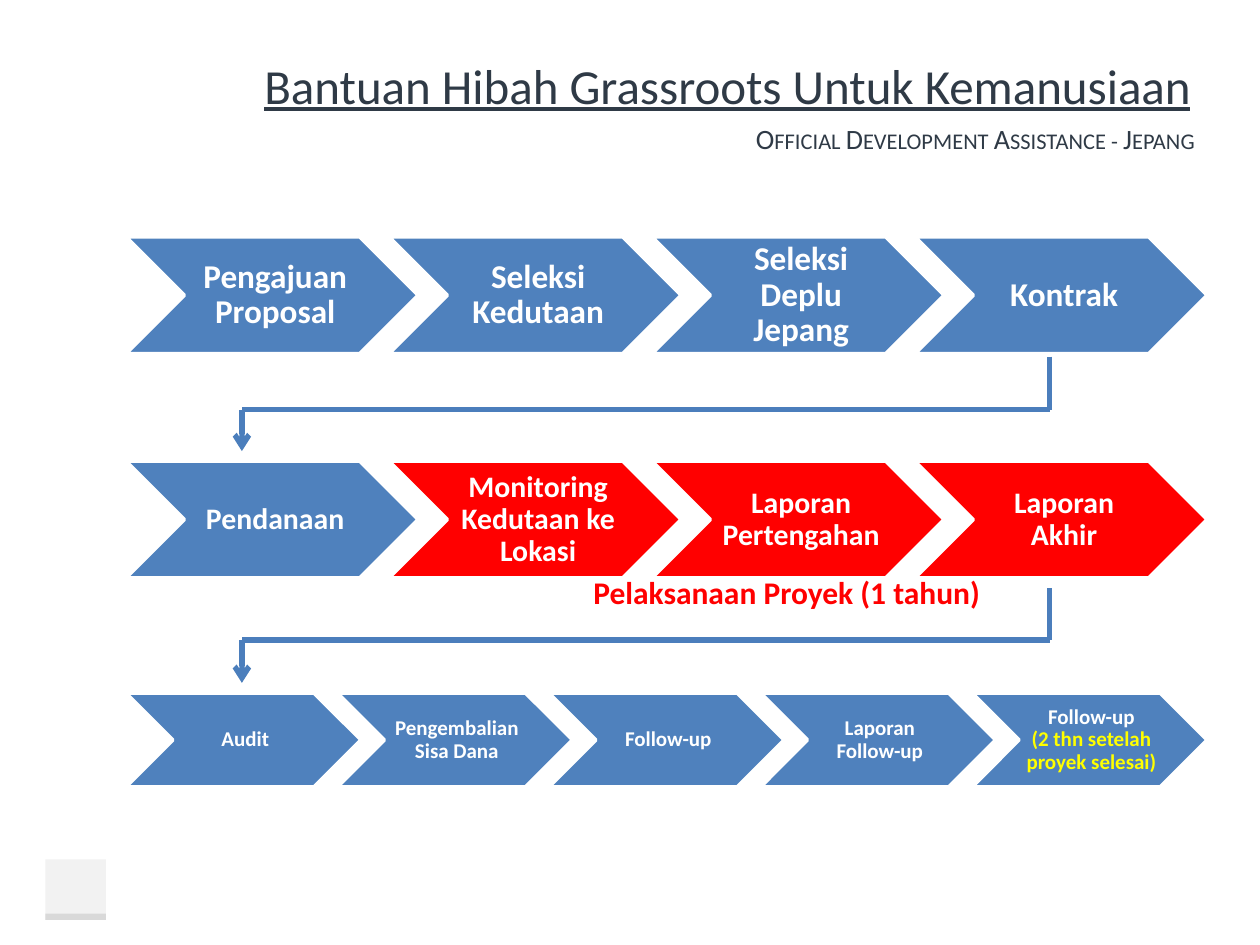
import pptx
import pptx.util
import pptx.dml.color
import pptx.enum.shapes
import pptx.enum.text
import pptx.oxml.ns
from lxml import etree

Inches, Pt = pptx.util.Inches, pptx.util.Pt
SHAPE = pptx.enum.shapes.MSO_SHAPE
ALIGN = pptx.enum.text.PP_ALIGN
ANCHOR = pptx.enum.text.MSO_ANCHOR

THEME = {
    "font": "Calibri",
    "ink": "2F3A46", "blue": "4F81BD", "red": "FF0000", "line": "4B7EBC",
    "white": "FFFFFF", "yellow": "FFFF00", "pale": "F2F2F2", "grey": "D9D9D9",
    "title": 28, "subtitle": 16, "label": 18,
}

# Content: each row has its top, type size, insets (left, others) and steps;
# a step is (fill, [(text, colour), ...])
TITLE = "Bantuan Hibah Grassroots Untuk Kemanusiaan"
SUBTITLE = "Official Development Assistance - Jepang"
LABEL = "Pelaksanaan Proyek (1 tahun)"
ROWS = [
    {"top": 1.88, "size": 19, "insets": (0.08, 0.03), "steps": [
        ("blue", [("Pengajuan Proposal", "white")]),
        ("blue", [("Seleksi Kedutaan", "white")]),
        ("blue", [("Seleksi Deplu Jepang", "white")]),
        ("blue", [("Kontrak", "white")])]},
    {"top": 3.66, "size": 17, "insets": (0.07, 0.02), "steps": [
        ("blue", [("Pendanaan", "white")]),
        ("red", [("Monitoring Kedutaan ke Lokasi", "white")]),
        ("red", [("Laporan Pertengahan", "white")]),
        ("red", [("Laporan Akhir", "white")])]},
    {"top": 5.5, "size": 12, "insets": (0.05, 0.02), "steps": [
        ("blue", [("Audit", "white")]),
        ("blue", [("Pengembalian Sisa Dana", "white")]),
        ("blue", [("Follow-up", "white")]),
        ("blue", [("Laporan Follow-up", "white")]),
        ("blue", [("Follow-up", "white"),
                  ("(2 thn setelah proyek selesai)", "yellow")])]},
]
ROW_LEFT, ROW_WIDTH = 1, 8.58
PITCH, ASPECT = 0.9, 0.4  # step pitch and height as shares of step width
RETURN_RIGHT, RETURN_LEFT = 8.33, 1.92
RETURNS = [(2.83, 3.25, 3.58), (4.67, 5.08, 5.42)]  # start, turn, tip


def color(name):
    return pptx.dml.color.RGBColor.from_string(THEME[name])


def set_all(obj, values):
    for name, value in values.items():
        setattr(obj, name, value)


def write(sp, paragraphs, size, align, anchor, bold=False, underline=False,
          spacing=None):
    tf = sp.text_frame
    set_all(tf, {"word_wrap": True, "vertical_anchor": anchor})
    for i, (text, ink) in enumerate(paragraphs):
        p = tf.paragraphs[0] if i == 0 else tf.add_paragraph()
        set_all(p, {"alignment": align, "line_spacing": spacing})
        r = p.add_run()
        r.text = text
        set_all(r.font, {"name": THEME["font"], "size": Pt(size),
                         "bold": bold, "underline": underline})
        r.font.color.rgb = color(ink)
    return sp


def add_text(box, *args, **formats):
    sp = s.shapes.add_textbox(*map(Inches, box))
    return write(sp, *args, **formats)


def add_block(kind, box, fill, outline=None):
    sp = s.shapes.add_shape(kind, *map(Inches, box))
    sp.shadow.inherit = False
    sp.fill.solid()
    sp.fill.fore_color.rgb = color(fill)
    if outline:
        sp.line.color.rgb = color(outline)
        sp.line.width = Pt(2)
    else:
        sp.line.fill.background()
    return sp


def add_line(start, end, arrow=False):
    c = s.shapes.add_connector(pptx.enum.shapes.MSO_CONNECTOR.STRAIGHT,
                               *map(Inches, start + end))
    c.line.color.rgb = color("line")
    c.line.width = Pt(3)
    if arrow:
        etree.SubElement(c.line._get_or_add_ln(),
                         pptx.oxml.ns.qn("a:tailEnd"), type="arrow")
    etree.SubElement(c._element.spPr, pptx.oxml.ns.qn("a:effectLst"))


prs = pptx.Presentation()
prs.slide_width, prs.slide_height = Inches(10), Inches(7.5)
s = prs.slides.add_slide(prs.slide_layouts[6])

# Corner block
add_block(SHAPE.RECTANGLE, (0.36, 6.82, 0.48, 0.48), "pale")
add_block(SHAPE.RECTANGLE, (0.36, 7.25, 0.48, 0.05), "grey")

# Headings
sp = add_text((3.27, 0.94, 6.31, 0.31), [(SUBTITLE, "ink")], THEME["subtitle"],
              ALIGN.RIGHT, ANCHOR.MIDDLE)
sp.text_frame.paragraphs[0].runs[0].font._element.set("cap", "small")
add_text((2, 0.33, 7.67, 0.68), [(TITLE, "ink")], THEME["title"],
         ALIGN.LEFT, ANCHOR.MIDDLE, underline=True)

# Chevron rows
for row in ROWS:
    width = ROW_WIDTH / (1 + PITCH * (len(row["steps"]) - 1))
    left_inset, inset = map(Inches, row["insets"])
    for i, (fill, paragraphs) in enumerate(row["steps"]):
        box = (ROW_LEFT + i * PITCH * width, row["top"], width, ASPECT * width)
        sp = add_block(SHAPE.CHEVRON, box, fill, "white")
        set_all(sp.text_frame, {"margin_left": left_inset, "margin_top": inset,
                                "margin_right": inset, "margin_bottom": inset})
        write(sp, paragraphs, row["size"], ALIGN.CENTER, ANCHOR.MIDDLE,
              bold=True, spacing=0.9)

# Return lines between rows
for start, turn, tip in RETURNS:
    add_line((RETURN_RIGHT, start), (RETURN_RIGHT, turn))
    add_line((RETURN_RIGHT, turn), (RETURN_LEFT, turn))
    add_line((RETURN_LEFT, turn), (RETURN_LEFT, tip), arrow=True)

# Label under the red steps
add_text((4.58, 4.5, 3.33, 0.4), [(LABEL, "red")], THEME["label"],
         ALIGN.CENTER, ANCHOR.TOP, bold=True)

prs.save("out.pptx")
